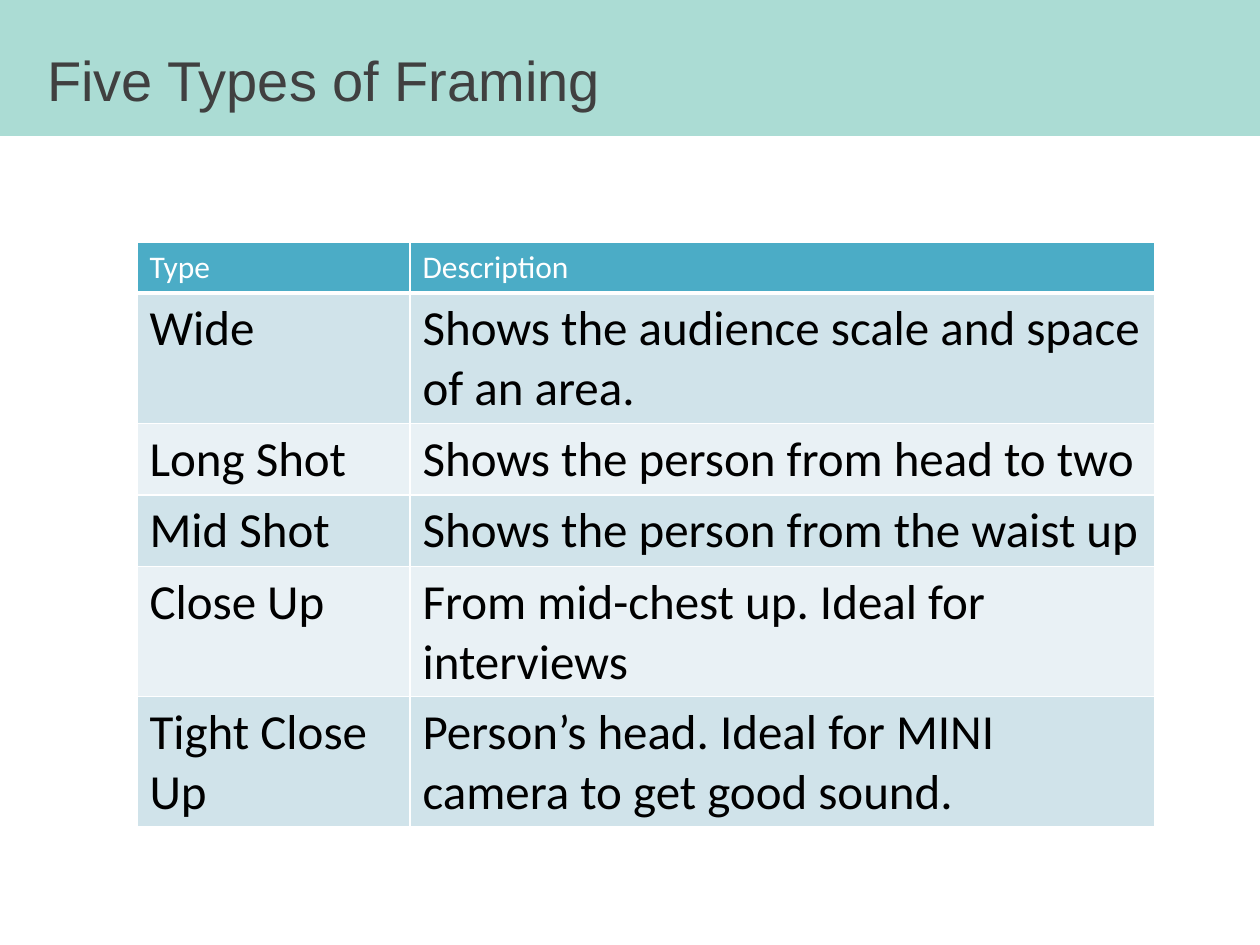
"""Build the slide on five types of framing."""
import pptx
import pptx.dml.color
import pptx.enum.shapes
import pptx.enum.text
import pptx.oxml
import pptx.oxml.ns
import pptx.util

SCALE = 914400 / 126
COLORS = {
    "mint": "ABDCD4",
    "gray": "404040",
    "teal": "4BACC6",
    "blue": "D0E3EA",
    "pale": "E9F1F5",
    "white": "FFFFFF",
    "black": "000000",
}
ROWS = [
    ("Type", "Description"),
    ("Wide", "Shows the audience scale and space of an area."),
    ("Long Shot", "Shows the person from head to two"),
    ("Mid Shot", "Shows the person from the waist up"),
    ("Close Up", "From mid-chest up. Ideal for interviews"),
    ("Tight Close Up", "Person’s head. Ideal for MINI camera to get good sound."),
]
COLS = (273, 745)
ROW_HIGH = 51


def px(num):
    """Turn px into EMU."""
    return pptx.util.Emu(round(num * SCALE))


def tint(name):
    """Look up a colour by name."""
    return pptx.dml.color.RGBColor.from_string(COLORS[name])


def style(frame, size, font, color):
    """Format every run in a text frame."""
    for para in frame.paragraphs:
        for run in para.runs:
            run.font.size = pptx.util.Pt(size)
            run.font.name = font
            run.font.bold = False
            run.font.color.rgb = tint(color)


def add_band(slide, left, top, wide, high):
    """Add the plain band behind the title."""
    band = slide.shapes.add_shape(
        pptx.enum.shapes.MSO_SHAPE.RECTANGLE, px(left), px(top), px(wide), px(high))
    band.shadow.inherit = False
    band.fill.solid()
    band.fill.fore_color.rgb = tint("mint")
    band.line.fill.background()


def add_title(slide, text, left, top, wide, high):
    """Add the title text."""
    frame = slide.shapes.add_textbox(px(left), px(top), px(wide), px(high)).text_frame
    frame.word_wrap = True
    frame.vertical_anchor = pptx.enum.text.MSO_ANCHOR.MIDDLE
    frame.text = text
    style(frame, 32, "Arial", "gray")


def add_edges(cell, base):
    """Draw white borders, the lower one with its own width."""
    props = cell._tc.get_or_add_tcPr()
    space = pptx.oxml.ns.nsdecls("a")
    widths = {"lnL": 1, "lnR": 1, "lnT": 1, "lnB": base}
    for spot, (tag, width) in enumerate(widths.items()):
        props.insert(spot, pptx.oxml.parse_xml(
            f'<a:{tag} {space} w="{pptx.util.Pt(width)}"><a:solidFill>'
            f'<a:srgbClr val="{COLORS["white"]}"/></a:solidFill></a:{tag}>'))


def fill_cell(cell, text, row):
    """Write and style one cell according to its row."""
    head = row == 0
    cell.text = text
    style(cell.text_frame, 18 if head else 28, "Calibri", "white" if head else "black")
    cell.fill.solid()
    cell.fill.fore_color.rgb = tint("teal" if head else "blue" if row % 2 else "pale")
    add_edges(cell, 3 if head else 1)


def add_grid(slide, left, top):
    """Add the table of framing types."""
    grid = slide.shapes.add_table(
        len(ROWS), len(COLS), px(left), px(top),
        px(sum(COLS)), px(ROW_HIGH * len(ROWS))).table
    for col, wide in zip(grid.columns, COLS):
        col.width = px(wide)
    for row, texts in enumerate(ROWS):
        grid.rows[row].height = px(ROW_HIGH)
        for col, text in enumerate(texts):
            fill_cell(grid.cell(row, col), text, row)


def main():
    """Build and save the slide."""
    deck = pptx.Presentation()
    deck.slide_width, deck.slide_height = px(1260), px(945)
    slide = deck.slides.add_slide(deck.slide_layouts[6])
    add_band(slide, 0, 0, 1260, 136)
    add_title(slide, "Five Types of Framing", 35, 53, 1225, 53)
    add_grid(slide, 137, 242)
    deck.save("out.pptx")


if __name__ == "__main__":
    main()
